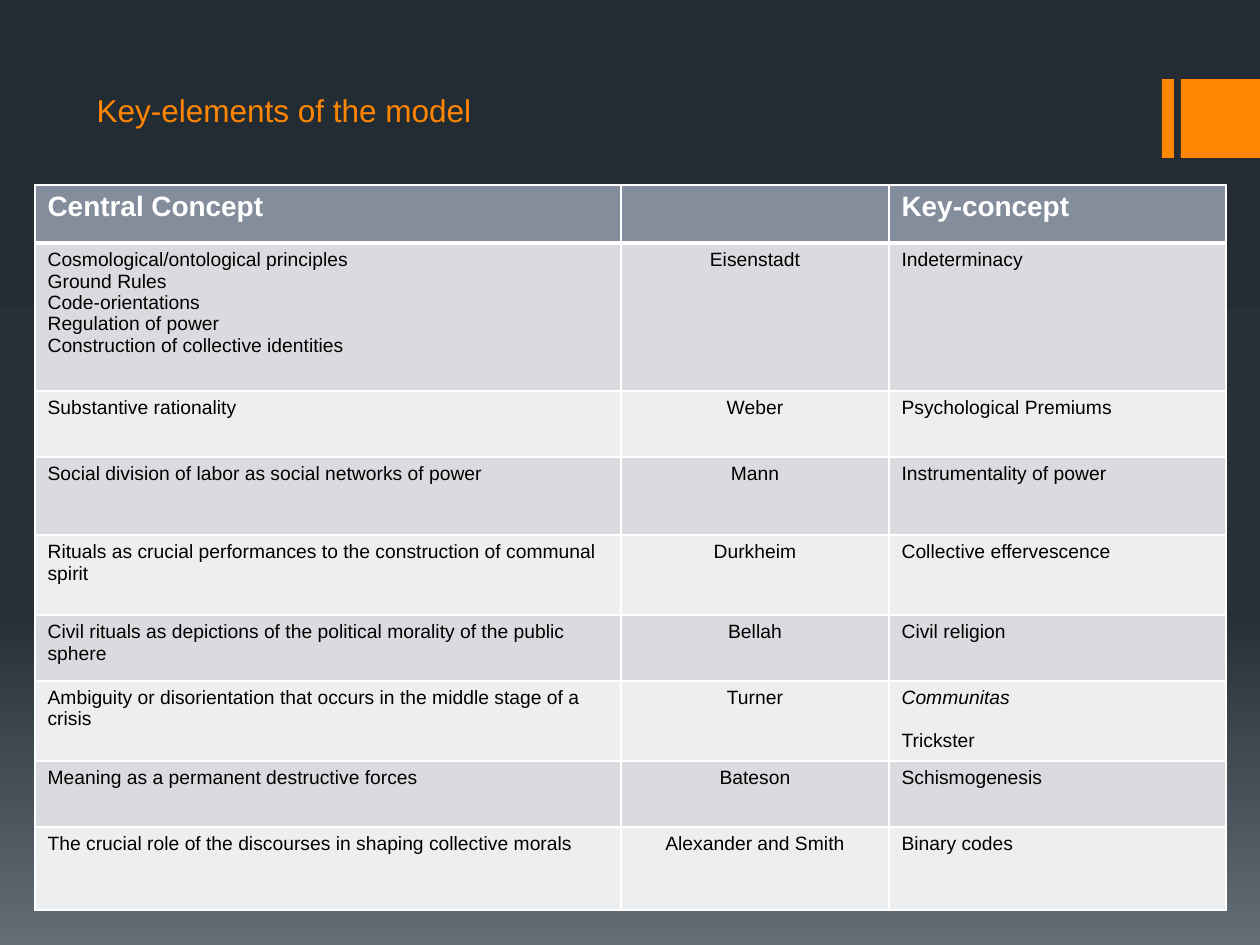
from dataclasses import dataclass

import copy
import lxml.etree
import pptx
import pptx.dml.color
import pptx.enum.shapes
import pptx.enum.text
import pptx.oxml.ns
import pptx.util

RGBColor = pptx.dml.color.RGBColor
ORANGE = RGBColor(0xFF, 0x86, 0x00)
WHITE = RGBColor(0xFF, 0xFF, 0xFF)
BLACK = RGBColor(0x00, 0x00, 0x00)
HEADER_GRAY = RGBColor(0x83, 0x8D, 0x9B)
BAND_DARK = RGBColor(0xD9, 0xDB, 0xDE)
BAND_LIGHT = RGBColor(0xED, 0xEE, 0xEF)
BACKDROP = (
    (0, RGBColor(0x24, 0x2C, 0x33)),
    (0.65, RGBColor(0x27, 0x30, 0x37)),
    (1, RGBColor(0x63, 0x6D, 0x76)),
)
FONT = "Arial"
PX_PER_INCH = 126
LEFT = pptx.enum.text.PP_ALIGN.LEFT
CENTER = pptx.enum.text.PP_ALIGN.CENTER
COLUMN_WIDTHS = (586, 268, 337)
HEADINGS = ("Central Concept", "", "Key-concept")
HEADING_HEIGHT = 58


@dataclass(frozen=True)
class Bar:
    left: int
    top: int
    width: int
    height: int


@dataclass(frozen=True)
class Entry:
    height: int
    concepts: tuple[str, ...]
    author: str
    key: str


BARS = (Bar(1162, 79, 12, 79), Bar(1181, 79, 79, 79))
ENTRIES = (
    Entry(148, ("Cosmological/ontological principles", "Ground Rules", "Code-orientations",
                "Regulation of power", "Construction of collective identities"),
          "Eisenstadt", "Indeterminacy"),
    Entry(66, ("Substantive rationality",), "Weber", "Psychological Premiums"),
    Entry(78, ("Social division of labor as social networks of power",),
          "Mann", "Instrumentality of power"),
    Entry(80, ("Rituals as crucial performances to the construction of communal spirit",),
          "Durkheim", "Collective effervescence"),
    Entry(66, ("Civil rituals as depictions of the political morality of the public sphere",),
          "Bellah", "Civil religion"),
    Entry(80, ("Ambiguity or disorientation that occurs in the middle stage of a crisis",),
          "Turner", "Communitas"),
    Entry(66, ("Meaning as a permanent destructive forces",), "Bateson", "Schismogenesis"),
    Entry(83, ("The crucial role of the discourses in shaping collective morals",),
          "Alexander and Smith", "Binary codes"),
)


def px(length: int) -> int:
    return round(length * 914400 / PX_PER_INCH)


def write(para, text: str, *, size: int = 11, color: RGBColor = BLACK, bold: bool = False,
          italic: bool = False, align=LEFT, before: float = 0) -> None:
    para.alignment = align
    para.space_before = pptx.util.Pt(before)
    span = para.add_run()
    span.text = text
    span.font.name = FONT
    span.font.size = pptx.util.Pt(size)
    span.font.color.rgb = color
    span.font.bold = bold
    span.font.italic = italic


def paint_background(page) -> None:
    fill = page.background.fill
    fill.gradient()
    fill.gradient_angle = 270
    stops = page._element.xpath(".//a:gsLst")[0]
    stops.append(copy.deepcopy(stops[-1]))
    for stop, (position, color) in zip(fill.gradient_stops, BACKDROP):
        stop.position = position
        stop.color.rgb = color


def draw_bar(page, bar: Bar) -> None:
    box = page.shapes.add_shape(pptx.enum.shapes.MSO_SHAPE.RECTANGLE, px(bar.left), px(bar.top),
                                px(bar.width), px(bar.height))
    box.shadow.inherit = False
    box.fill.solid()
    box.fill.fore_color.rgb = ORANGE
    box.line.fill.background()


def style_cell(cell, fill: RGBColor, top: int = 1, bottom: int = 1) -> None:
    cell.fill.solid()
    cell.fill.fore_color.rgb = fill
    properties = cell._tc.get_or_add_tcPr()
    borders = (("a:lnL", 1), ("a:lnR", 1), ("a:lnT", top), ("a:lnB", bottom))
    for index, (tag, width) in enumerate(borders):
        line = lxml.etree.Element(pptx.oxml.ns.qn(tag), w=str(pptx.util.Pt(width)))
        solid = lxml.etree.SubElement(line, pptx.oxml.ns.qn("a:solidFill"))
        lxml.etree.SubElement(solid, pptx.oxml.ns.qn("a:srgbClr"), val=str(WHITE))
        properties.insert(index, line)


def draw_title(page) -> None:
    title = page.shapes.title
    title.left, title.top, title.width, title.height = px(84), px(45), px(1008), px(90)
    frame = title.text_frame
    frame.word_wrap = True
    frame.auto_size = pptx.enum.text.MSO_AUTO_SIZE.NONE
    frame.vertical_anchor = pptx.enum.text.MSO_ANCHOR.BOTTOM
    write(frame.paragraphs[0], "Key-elements of the model", size=18, color=ORANGE)


def draw_table(page) -> None:
    heights = [HEADING_HEIGHT] + [entry.height for entry in ENTRIES]
    table = page.shapes.add_table(len(heights), len(COLUMN_WIDTHS), px(35), px(185),
                                  px(sum(COLUMN_WIDTHS)), px(sum(heights))).table
    for column, width in zip(table.columns, COLUMN_WIDTHS):
        column.width = px(width)
    for row, height in zip(table.rows, heights):
        row.height = px(height)

    for cell, heading in zip(table.rows[0].cells, HEADINGS):
        style_cell(cell, HEADER_GRAY, bottom=3)
        if heading:
            write(cell.text_frame.paragraphs[0], heading, size=16, color=WHITE, bold=True)

    for number, entry in enumerate(ENTRIES, start=1):
        concept, author, key = table.rows[number].cells
        for cell in (concept, author, key):
            style_cell(cell, BAND_DARK if number % 2 else BAND_LIGHT, top=3 if number == 1 else 1)
        for index, text in enumerate(entry.concepts):
            frame = concept.text_frame
            write(frame.add_paragraph() if index else frame.paragraphs[0], text)
        write(author.text_frame.paragraphs[0], entry.author, align=CENTER)
        latin = entry.key == "Communitas"
        write(key.text_frame.paragraphs[0], entry.key, italic=latin)
        if latin:
            write(key.text_frame.add_paragraph(), "Trickster", before=12.2)


def main() -> None:
    deck = pptx.Presentation()
    deck.slide_width = px(1260)
    deck.slide_height = px(945)
    page = deck.slides.add_slide(deck.slide_layouts.get_by_name("Title Only"))
    paint_background(page)
    for bar in BARS:
        draw_bar(page, bar)
    draw_title(page)
    draw_table(page)
    deck.save("out.pptx")


if __name__ == "__main__":
    main()
